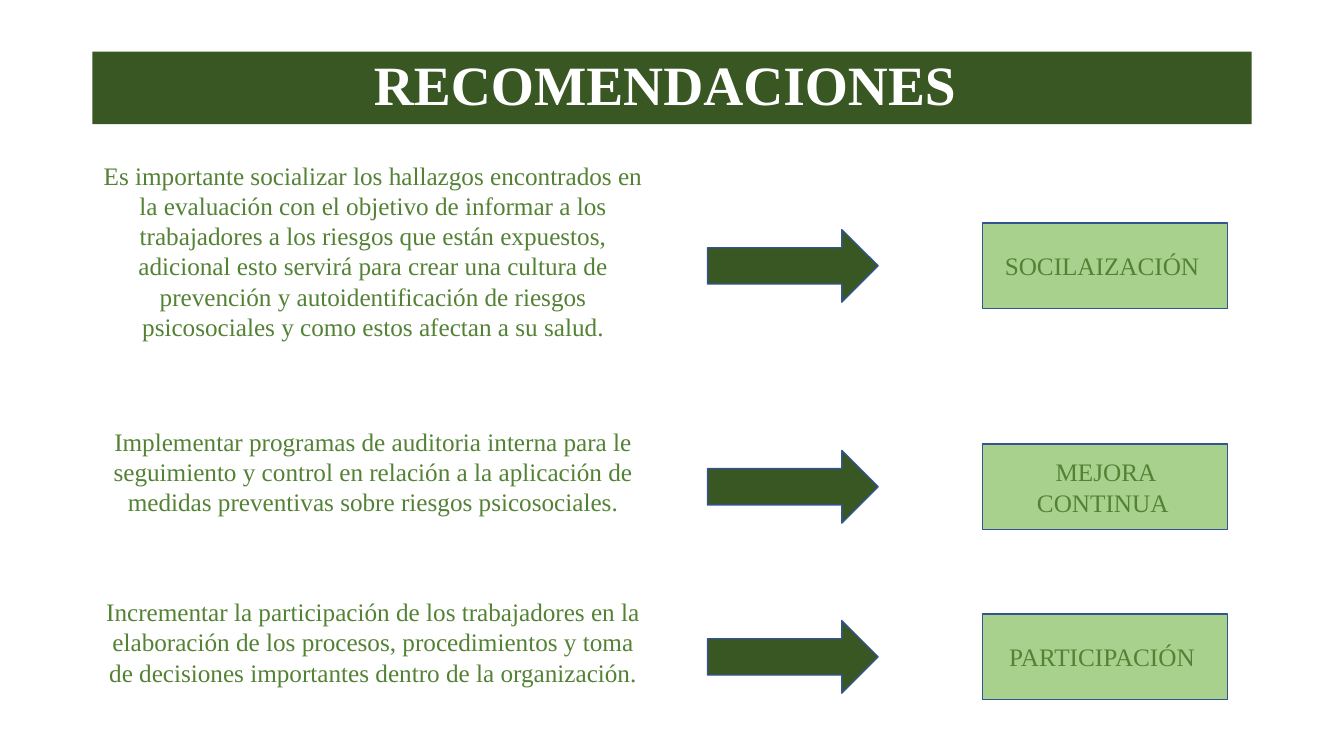
from dataclasses import dataclass

from pptx import Presentation
from pptx.dml.color import RGBColor as Rgb
from pptx.enum.shapes import MSO_SHAPE as Kind
from pptx.enum.text import MSO_ANCHOR as Anchor, PP_ALIGN as Align
from pptx.shapes.autoshape import Shape
from pptx.slide import Slide
from pptx.util import Inches, Pt

COLS, ROWS = 160, 90
WIDE, HIGH = Inches(13.333), Inches(7.5)
FONT = "Times New Roman"
COLOR = {
    "dark": "385723",
    "text": "548235",
    "light": "A9D18E",
    "edge": "325491",
    "white": "FFFFFF",
}


@dataclass(frozen=True)
class Span:
    left: float
    width: float


@dataclass(frozen=True)
class Advice:
    mid: float
    height: float
    text: str
    label: str


BANNER = Span(11, 138)
PROSE = Span(11, 66.84)
ARROW = Span(84.24, 20.3)
LABEL = Span(117, 29.16)
LIFT = 1.8

ITEMS = [
    Advice(31.65, 28, "Es importante socializar los hallazgos encontrados en la evaluación "
           "con el objetivo de informar a los trabajadores a los riesgos que están expuestos, "
           "adicional esto servirá para crear una cultura de prevención y autoidentificación "
           "de riesgos psicosociales y como estos afectan a su salud.", "SOCILAIZACIÓN "),
    Advice(57.95, 12.8, "Implementar programas de auditoria interna para le seguimiento y "
           "control en relación a la aplicación de medidas preventivas sobre riesgos "
           "psicosociales.", "MEJORA CONTINUA "),
    Advice(78.2, 16, "Incrementar la participación de los trabajadores en la elaboración de "
           "los procesos, procedimientos y toma de decisiones importantes dentro de la "
           "organización.", "PARTICIPACIÓN "),
]


def place(span: Span, mid: float, height: float) -> tuple[int, int, int, int]:
    return (round(span.left * WIDE / COLS), round((mid - height / 2) * HIGH / ROWS),
            round(span.width * WIDE / COLS), round(height * HIGH / ROWS))


def write(shape: Shape, text: str, size: float, color: str, bold: bool = False) -> None:
    frame = shape.text_frame
    frame.word_wrap = True
    frame.vertical_anchor = Anchor.MIDDLE
    frame.text = text
    para = frame.paragraphs[0]
    para.alignment = Align.CENTER
    font = para.runs[0].font
    font.name, font.size, font.bold = FONT, Pt(size), bold
    font.color.rgb = Rgb.from_string(COLOR[color])


def block(slide: Slide, kind: Kind, span: Span, mid: float, height: float,
          fill: str, edge: str = "") -> Shape:
    shape = slide.shapes.add_shape(kind, *place(span, mid, height))
    shape.shadow.inherit = False
    shape.fill.solid()
    shape.fill.fore_color.rgb = Rgb.from_string(COLOR[fill])
    if edge:
        shape.line.color.rgb = Rgb.from_string(COLOR[edge])
        shape.line.width = Pt(1)
    else:
        shape.line.fill.background()
    return shape


def draw(slide: Slide, item: Advice) -> None:
    prose = slide.shapes.add_textbox(*place(PROSE, item.mid - LIFT, item.height))
    write(prose, item.text, 18, "text")
    block(slide, Kind.RIGHT_ARROW, ARROW, item.mid, 8.64, "dark", "edge")
    label = block(slide, Kind.RECTANGLE, LABEL, item.mid, 10.2, "light", "edge")
    write(label, item.label, 18, "text")


def main() -> None:
    deck = Presentation()
    deck.slide_width, deck.slide_height = WIDE, HIGH
    slide = deck.slides.add_slide(deck.slide_layouts[6])
    title = block(slide, Kind.RECTANGLE, BANNER, 10.45, 8.64, "dark")
    write(title, "RECOMENDACIONES ", 39.6, "white", True)
    title.text_frame.paragraphs[0].line_spacing = 0.9
    for item in ITEMS:
        draw(slide, item)
    deck.save("out.pptx")


if __name__ == "__main__":
    main()
